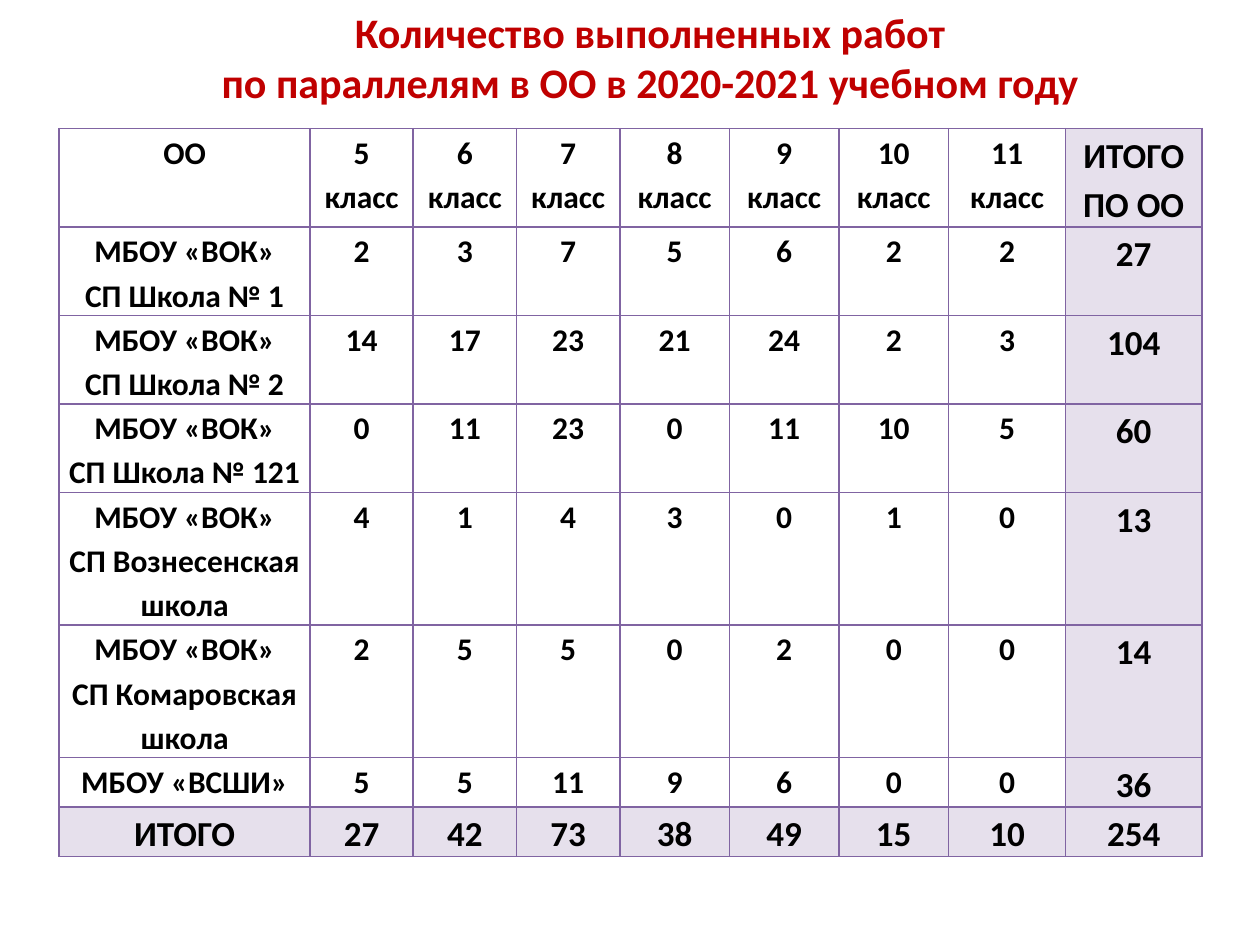
from dataclasses import dataclass

from lxml.etree import SubElement
from pptx import Presentation
from pptx.dml.color import RGBColor
from pptx.enum.text import MSO_ANCHOR, PP_ALIGN
from pptx.oxml.ns import qn
from pptx.util import Inches, Pt


@dataclass(frozen=True)
class Theme:
    font: str = "Calibri"
    heading: str = "C00000"
    ink: str = "000000"
    border: str = "8064A2"
    total_fill: str = "E6E0EC"
    heading_size: int = 24
    body_size: int = 18
    total_size: int = 20
    border_width: int = 1


THEME = Theme()
SLIDE_SIZE = (10, 7.5)
HEADING_BOX = (0.94, 0, 8.44, 1.21)
TABLE_BOX = (0.47, 1.02, 9.06, 5.5)

HEADING = [
    "Количество выполненных работ",
    "по параллелям в ОО в 2020-2021 учебном году",
]
GRADES = range(5, 12)
COLUMN_WIDTHS = [1.99] + [0.82] * 3 + [0.87] * 3 + [0.93, 1.08]
LINE_HEIGHT = 0.29
LINES_PER_ROW = [2, 2, 2, 2, 3, 3, 1, 1]

WORKS = [
    ("МБОУ «ВОК»\nСП Школа № 1", [2, 3, 7, 5, 6, 2, 2]),
    ("МБОУ «ВОК»\nСП Школа № 2", [14, 17, 23, 21, 24, 2, 3]),
    ("МБОУ «ВОК»\nСП Школа № 121", [0, 11, 23, 0, 11, 10, 5]),
    ("МБОУ «ВОК»\nСП Вознесенская школа", [4, 1, 4, 3, 0, 1, 0]),
    ("МБОУ «ВОК»\nСП Комаровская школа", [2, 5, 5, 0, 2, 0, 0]),
    ("МБОУ «ВСШИ»", [5, 5, 11, 9, 6, 0, 0]),
]


def works_rows():
    """Header, one row per school with its sum, and the row of column sums."""
    header = ["ОО", *(f"{grade} класс" for grade in GRADES), "ИТОГО ПО ОО"]
    schools = [[school, *counts, sum(counts)] for school, counts in WORKS]
    sums = [sum(column) for column in zip(*(row[1:] for row in schools))]
    return [header, *schools, ["ИТОГО", *sums]]


def write_lines(frame, lines, size, color, spacing=None):
    frame.text = "\n".join(lines)
    for line in frame.paragraphs:
        line.alignment = PP_ALIGN.CENTER
        line.line_spacing = spacing
        for run in line.runs:
            font_format = {"name": THEME.font, "size": Pt(size), "bold": True}
            for attribute, value in font_format.items():
                setattr(run.font, attribute, value)
            run.font.color.rgb = RGBColor.from_string(color)


def draw_borders(cell):
    properties = cell._tc.get_or_add_tcPr()
    for index, side in enumerate(("lnL", "lnR", "lnT", "lnB")):
        edge = properties.makeelement(
            qn(f"a:{side}"), {"w": str(Pt(THEME.border_width))}
        )
        fill = SubElement(edge, qn("a:solidFill"))
        SubElement(fill, qn("a:srgbClr"), val=THEME.border)
        properties.insert(index, edge)


def fill_cell(cell, content, is_total, is_large):
    cell_format = {
        "margin_left": Inches(0.07),
        "margin_right": Inches(0.07),
        "margin_top": 0,
        "margin_bottom": 0,
        "vertical_anchor": MSO_ANCHOR.TOP,
    }
    for attribute, value in cell_format.items():
        setattr(cell, attribute, value)
    size = THEME.total_size if is_large else THEME.body_size
    write_lines(cell.text_frame, str(content).split("\n"), size, THEME.ink, 1.15)
    if is_total:
        cell.fill.solid()
        cell.fill.fore_color.rgb = RGBColor.from_string(THEME.total_fill)
    else:
        cell.fill.background()
    draw_borders(cell)


def add_works_table(slide, box):
    rows = works_rows()
    graphic = slide.shapes.add_table(
        len(rows), len(COLUMN_WIDTHS), *map(Inches, box)
    )
    table = graphic.table
    for flag in ("first_row", "horz_banding"):
        setattr(table, flag, False)
    for column, width in zip(table.columns, COLUMN_WIDTHS):
        column.width = Inches(width)
    for row, lines in zip(table.rows, LINES_PER_ROW):
        row.height = Inches(lines * LINE_HEIGHT)
    graphic.height = Inches(box[3])

    for r, row in enumerate(rows):
        for c, content in enumerate(row):
            is_total = r == len(rows) - 1 or c == len(row) - 1
            fill_cell(table.cell(r, c), content, is_total, is_total)


def add_heading(slide, box):
    frame = slide.shapes.add_textbox(*map(Inches, box)).text_frame
    frame.word_wrap = True
    frame.vertical_anchor = MSO_ANCHOR.TOP
    write_lines(frame, HEADING, THEME.heading_size, THEME.heading)


def main():
    deck = Presentation()
    deck.slide_width, deck.slide_height = map(Inches, SLIDE_SIZE)
    slide = deck.slides.add_slide(deck.slide_layouts[6])
    add_works_table(slide, TABLE_BOX)
    add_heading(slide, HEADING_BOX)
    deck.save("out.pptx")


if __name__ == "__main__":
    main()
